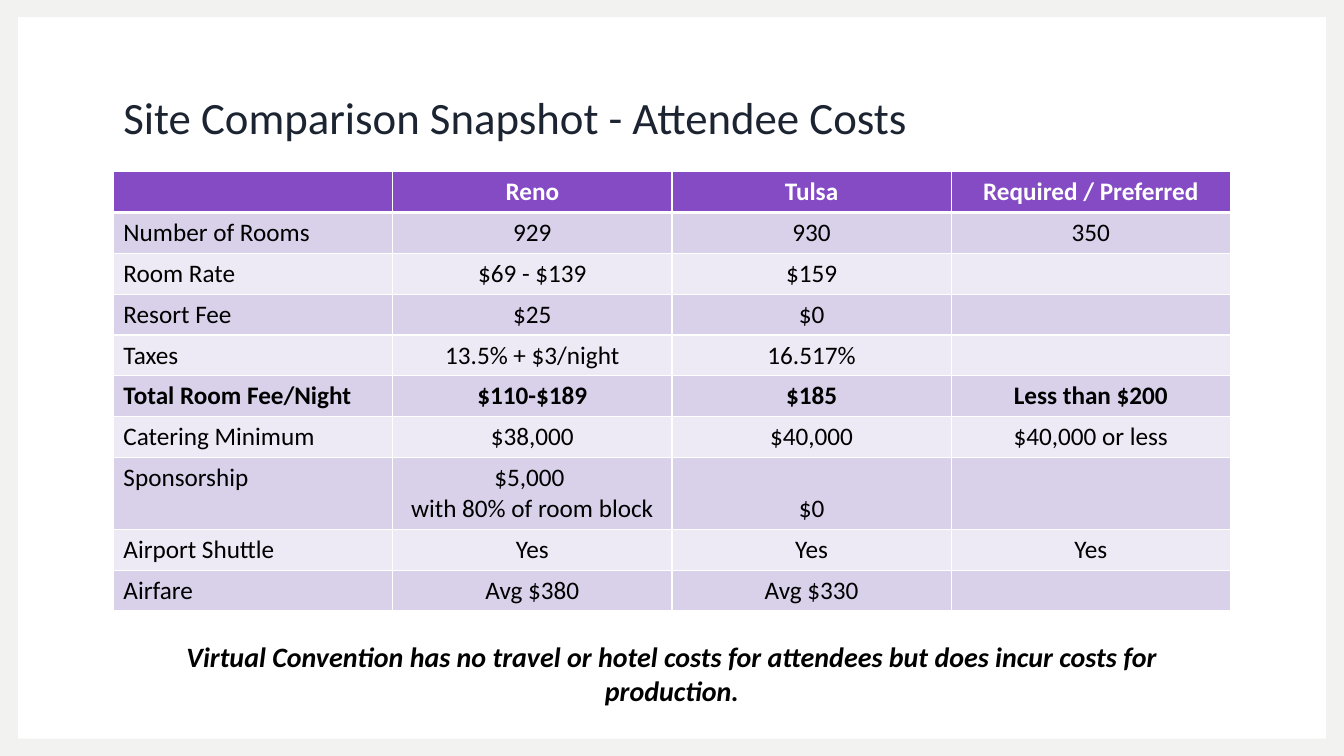
from pptx import Presentation
from pptx.dml.color import RGBColor
from pptx.enum.text import MSO_ANCHOR as ANCHOR, PP_ALIGN as ALIGN
from pptx.oxml import parse_xml
from pptx.oxml.ns import nsdecls
from pptx.util import Pt

FRAME = RGBColor(0xF2, 0xF3, 0xF0)
NAVY = RGBColor(0x1C, 0x24, 0x32)
PURPLE = RGBColor(0x84, 0x4B, 0xC5)
LILAC = RGBColor(0xD9, 0xD0, 0xEA)
PALE = RGBColor(0xED, 0xE9, 0xF5)
WHITE = RGBColor(0xFF, 0xFF, 0xFF)
BLACK = RGBColor(0, 0, 0)

FONT = "Calibri"
SLIDE_W, SLIDE_H = 960, 540
LEFT, WIDTH = 81, 798
ROW_H, TALL_ROW_H = 29.2, 51.2
TOTAL_ROW, SPONSOR_ROW = 5, 7

COSTS = [
    ["", "Reno", "Tulsa", "Required / Preferred"],
    ["Number of Rooms", "929", "930", "350"],
    ["Room Rate", "$69 - $139", "$159", ""],
    ["Resort Fee", "$25", "$0", ""],
    ["Taxes", "13.5% + $3/night", "16.517%", ""],
    ["Total Room Fee/Night", "$110-$189", "$185", "Less than $200"],
    ["Catering Minimum", "$38,000", "$40,000", "$40,000 or less"],
    ["Sponsorship", "$5,000 \nwith 80% of room block", "$0", ""],
    ["Airport Shuttle", "Yes", "Yes", "Yes"],
    ["Airfare", "Avg $380", "Avg $330", ""],
]


def style_text(tf, size, color, bold=False, italic=False, align=ALIGN.LEFT):
    for p in tf.paragraphs:
        p.alignment = align
        p.font.size = Pt(size)
        for r in p.runs:
            r.font.name, r.font.size = FONT, Pt(size)
            r.font.bold, r.font.italic = bold, italic
            r.font.color.rgb = color


def add_frame(s, x, y, w, h, side, end):
    """Border around the slide, with a rectangular opening."""
    def corners(dx, dy):
        return [(x + dx, y + dy), (x + dx, y + h - dy),
                (x + w - dx, y + h - dy), (x + w - dx, y + dy)]

    outer = corners(0, 0)
    inner = corners(side, end)[::-1]
    # Freeform coordinates are in tenths of a point
    outer, inner = [[(px * 10, py * 10) for px, py in ring] for ring in (outer, inner)]
    fb = s.shapes.build_freeform(*outer[0], scale=Pt(1) / 10)
    fb.add_line_segments(outer[1:], close=True)
    fb.move_to(*inner[0])
    fb.add_line_segments(inner[1:], close=True)
    sp = fb.convert_to_shape()
    sp.shadow.inherit = False
    sp.fill.solid()
    sp.fill.fore_color.rgb = FRAME
    sp.line.fill.background()


def add_text(s, x, y, w, h, text, anchor=ANCHOR.TOP):
    tf = s.shapes.add_textbox(Pt(x), Pt(y), Pt(w), Pt(h)).text_frame
    tf.word_wrap = True
    tf.vertical_anchor = anchor
    tf.text = text
    return tf


def add_title(s, x, y, w, h):
    tf = add_text(s, x, y, w, h, "Site Comparison Snapshot - Attendee Costs", ANCHOR.BOTTOM)
    style_text(tf, 32, NAVY)
    tf.paragraphs[0].line_spacing = 1.1


def set_borders(cell, widths):
    tc_pr = cell._tc.get_or_add_tcPr()
    for side, width in zip("LRTB", widths):
        tc_pr.append(parse_xml(
            f'<a:ln{side} {nsdecls("a")} w="{Pt(width)}"><a:solidFill>'
            f'<a:srgbClr val="{WHITE}"/></a:solidFill></a:ln{side}>'))


def add_cost_table(s, x, y, w):
    rows, cols = len(COSTS), len(COSTS[0])
    h = ROW_H * (rows - 1) + TALL_ROW_H
    table = s.shapes.add_table(rows, cols, Pt(x), Pt(y), Pt(w), Pt(h)).table
    for col in table.columns:
        col.width = Pt(w / cols)
    for i, values in enumerate(COSTS):
        header = i == 0
        table.rows[i].height = Pt(TALL_ROW_H if i == SPONSOR_ROW else ROW_H)
        for j, value in enumerate(values):
            cell = table.cell(i, j)
            cell.text_frame.text = value
            style_text(cell.text_frame, 18, WHITE if header else BLACK,
                       bold=i in (0, TOTAL_ROW),
                       align=ALIGN.CENTER if j else ALIGN.LEFT)
            # Thick rule below the header
            set_borders(cell, (1, 1, 3 if i == 1 else 1, 3 if header else 1))
            cell.fill.solid()
            cell.fill.fore_color.rgb = PURPLE if header else LILAC if i % 2 else PALE
    # Tulsa's sponsorship lines up with the second line of Reno's
    table.cell(SPONSOR_ROW, 2).vertical_anchor = ANCHOR.BOTTOM


def add_footnote(s, x, y, w, h):
    tf = add_text(s, x, y, w, h, "Virtual Convention has no travel or hotel costs for "
                  "attendees but does incur costs for production.")
    style_text(tf, 20, BLACK, bold=True, italic=True, align=ALIGN.CENTER)


def main():
    prs = Presentation()
    prs.slide_width, prs.slide_height = Pt(SLIDE_W), Pt(SLIDE_H)
    s = prs.slides.add_slide(prs.slide_layouts[6])
    add_frame(s, 0, 0, SLIDE_W, SLIDE_H, 12.8, 12.3)
    add_title(s, LEFT, 57, WIDTH, 49)
    add_cost_table(s, LEFT, 122.5, WIDTH)
    add_footnote(s, LEFT, 453.5, WIDTH, 56)
    prs.save("out.pptx")


if __name__ == "__main__":
    main()
